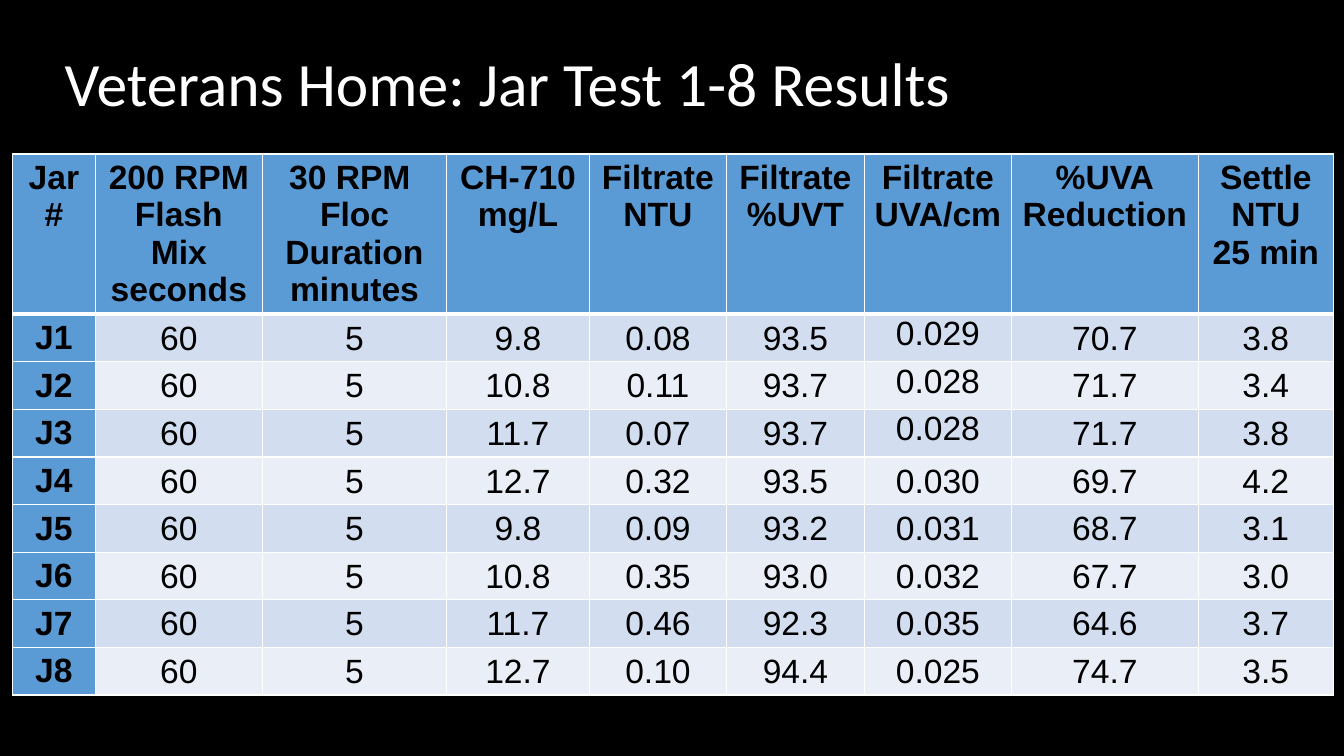
import pptx
import pptx.util
import pptx.dml.color
import pptx.enum.text
import pptx.oxml
import pptx.oxml.ns
from dataclasses import dataclass

Pt = pptx.util.Pt
ANCHOR = pptx.enum.text.MSO_ANCHOR
ALIGN = pptx.enum.text.PP_ALIGN


@dataclass(frozen=True)
class Theme:
    back: str = "000000"
    light: str = "FFFFFF"
    ink: str = "000000"
    head: str = "5B9BD5"
    bands: tuple = ("D2DEEF", "EAEFF7")
    title_font: str = "Calibri"
    body_font: str = "Arial"
    title_size: int = 44
    body_size: int = 24
    thin: int = 1
    thick: int = 3


THEME = Theme()

HEADS = ["Jar\n#", "200 RPM\nFlash\nMix\nseconds",
         "30 RPM \nFloc\nDuration\nminutes", "CH-710\nmg/L",
         "Filtrate\nNTU", "Filtrate\n%UVT", "Filtrate\nUVA/cm",
         "%UVA\nReduction", "Settle\nNTU\n25 min"]
WIDTHS = [59, 119.5, 131.5, 102, 98, 98.5, 105, 133.5, 96.5]

# Dose, filtrate NTU, %UVT, UVA/cm, %UVA reduction, settled NTU
TESTS = [
    ["9.8", "0.08", "93.5", "0.029", "70.7", "3.8"],
    ["10.8", "0.11", "93.7", "0.028", "71.7", "3.4"],
    ["11.7", "0.07", "93.7", "0.028", "71.7", "3.8"],
    ["12.7", "0.32", "93.5", "0.030", "69.7", "4.2"],
    ["9.8", "0.09", "93.2", "0.031", "68.7", "3.1"],
    ["10.8", "0.35", "93.0", "0.032", "67.7", "3.0"],
    ["11.7", "0.46", "92.3", "0.035", "64.6", "3.7"],
    ["12.7", "0.10", "94.4", "0.025", "74.7", "3.5"],
]
FLASH, FLOC = "60", "5"
HEAD_TALL, ROW_TALL = 114.5, 34
UVA_COL, TOP_ROWS = 6, (1, 2, 3)


def rgb(code):
    return pptx.dml.color.RGBColor.from_string(code)


def style(para, font, size, color, align, bold=False):
    para.alignment = align
    para.font.name = font
    para.font.size = Pt(size)
    para.font.bold = bold
    para.font.color.rgb = rgb(color)


def add_title(slide, text):
    title = slide.shapes.title
    title.left, title.top = Pt(39), Pt(9.5)
    title.width, title.height = Pt(855.5), Pt(104.5)
    title.text_frame.text = text
    title.text_frame.vertical_anchor = ANCHOR.MIDDLE
    para = title.text_frame.paragraphs[0]
    para.line_spacing = 0.9
    style(para, THEME.title_font, THEME.title_size, THEME.light, ALIGN.LEFT)


def add_edges(cell, row):
    props = cell._tc.get_or_add_tcPr()
    thick = {0: "B", 1: "T"}.get(row)
    for side in "LRTB":
        width = THEME.thick if side == thick else THEME.thin
        props.append(pptx.oxml.parse_xml(
            f'<a:ln{side} {pptx.oxml.ns.nsdecls("a")} w="{Pt(width)}">'
            f'<a:solidFill><a:srgbClr val="{THEME.light}"/></a:solidFill>'
            f'</a:ln{side}>'))


def fill_cell(cell, text, row, col):
    label = row == 0 or col == 0
    add_edges(cell, row)
    cell.fill.solid()
    cell.fill.fore_color.rgb = rgb(
        THEME.head if label else THEME.bands[(row - 1) % 2])
    cell.text = text
    for para in cell.text_frame.paragraphs:
        style(para, THEME.body_font, THEME.body_size, THEME.ink,
              ALIGN.CENTER, label)
    # Readings sit in the middle with almost no margin
    if not label:
        cell.margin_left = cell.margin_right = cell.margin_top = Pt(0.75)
        cell.margin_bottom = Pt(0)
        high = col == UVA_COL and row in TOP_ROWS
        cell.vertical_anchor = ANCHOR.TOP if high else ANCHOR.MIDDLE


def add_results(slide):
    rows = [HEADS] + [[f"J{num}", FLASH, FLOC, *test]
                      for num, test in enumerate(TESTS, 1)]
    tall = HEAD_TALL + ROW_TALL * len(TESTS)
    table = slide.shapes.add_table(
        len(rows), len(HEADS), Pt(9), Pt(110),
        Pt(sum(WIDTHS)), Pt(tall)).table
    for col, width in zip(table.columns, WIDTHS):
        col.width = Pt(width)
    for row, texts in enumerate(rows):
        table.rows[row].height = Pt(ROW_TALL if row else HEAD_TALL)
        for col, text in enumerate(texts):
            fill_cell(table.cell(row, col), text, row, col)


def main():
    deck = pptx.Presentation()
    deck.slide_width, deck.slide_height = Pt(960), Pt(540)
    # Title-only slide on black
    slide = deck.slides.add_slide(deck.slide_layouts[5])
    slide.background.fill.solid()
    slide.background.fill.fore_color.rgb = rgb(THEME.back)
    add_title(slide, "Veterans Home: Jar Test 1-8 Results")
    add_results(slide)
    deck.save("out.pptx")


if __name__ == "__main__":
    main()
